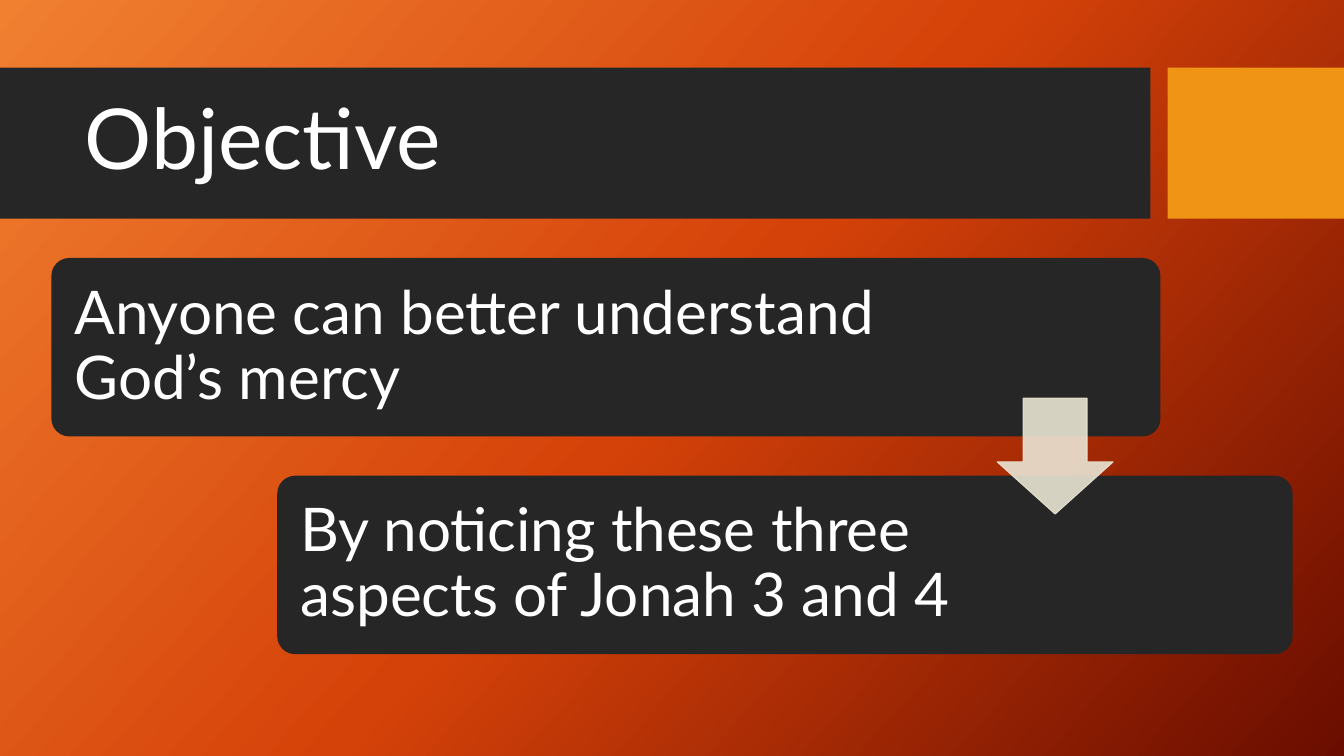
"""Build the Objective slide with two linked statement cards."""
from copy import deepcopy
from pptx import Presentation
from pptx.dml.color import RGBColor
from pptx.enum.shapes import MSO_SHAPE
from pptx.enum.text import MSO_ANCHOR
from pptx.oxml.ns import qn
from pptx.util import Inches, Pt
from lxml.etree import SubElement

DARK = "262626"
CREAM = "E9E5D4"


def block(kind, box, color, adjust=()):
    shape = slide.shapes.add_shape(kind, *map(Inches, box))
    shape.shadow.inherit = False
    shape.fill.solid()
    shape.fill.fore_color.rgb = RGBColor.from_string(color)
    shape.line.fill.background()
    for i, value in enumerate(adjust):
        shape.adjustments[i] = value
    return shape


def label(text, box, size, pad):
    frame = slide.shapes.add_textbox(*map(Inches, box)).text_frame
    frame.word_wrap = True
    frame.vertical_anchor = MSO_ANCHOR.MIDDLE
    frame.margin_left = frame.margin_right = Inches(pad[0])
    frame.margin_top = frame.margin_bottom = Inches(pad[1])
    frame.text = text
    para = frame.paragraphs[0]
    para.line_spacing = 0.9
    font = para.runs[0].font
    font.name = "Lato"
    font.size = Pt(size)
    font.color.rgb = RGBColor.from_string("FFFFFF")


deck = Presentation()
deck.slide_width = Inches(13.33)
deck.slide_height = Inches(7.5)
slide = deck.slides.add_slide(deck.slide_layouts[6])

fill = slide.background.fill
fill.gradient()
fill.gradient_angle = 318
stops = slide.element.find(".//" + qn("a:gsLst"))
stops.insert(1, deepcopy(stops[0]))
shades = [(0, "F18031"), (0.5, "D54209"), (1, "6A0D00")]
for stop, (place, color) in zip(fill.gradient_stops, shades):
    stop.position = place
    stop.color.rgb = RGBColor.from_string(color)

block(MSO_SHAPE.RECTANGLE, (0, 0.67, 11.41, 1.5), DARK)
block(MSO_SHAPE.RECTANGLE, (11.58, 0.67, 1.75, 1.5), "F09415")
label("Objective", (0.74, 0.82, 10.51, 1.18), 60, (0.1, 0.05))

cards = [
    ("Anyone can better understand God’s mercy", 0.51, 2.56, 11, 9.01),
    ("By noticing these three aspects of Jonah 3 and 4", 2.75, 4.72, 10.07, 7.04),
]
for text, left, top, width, span in cards:
    block(MSO_SHAPE.ROUNDED_RECTANGLE, (left, top, width, 1.77), DARK, [0.1])
    label(text, (left + 0.05, top + 0.05, span, 1.67), 43, (0.18, 0.18))

arrow = block(MSO_SHAPE.DOWN_ARROW, (9.89, 3.95, 1.15, 1.15), CREAM, [0.55, 0.45])
arrow.line.color.rgb = RGBColor.from_string(CREAM)
arrow.line.width = Pt(0.75)
for color in arrow.element.spPr.iter(qn("a:srgbClr")):
    SubElement(color, qn("a:alpha"), val="90000")

deck.save("out.pptx")
